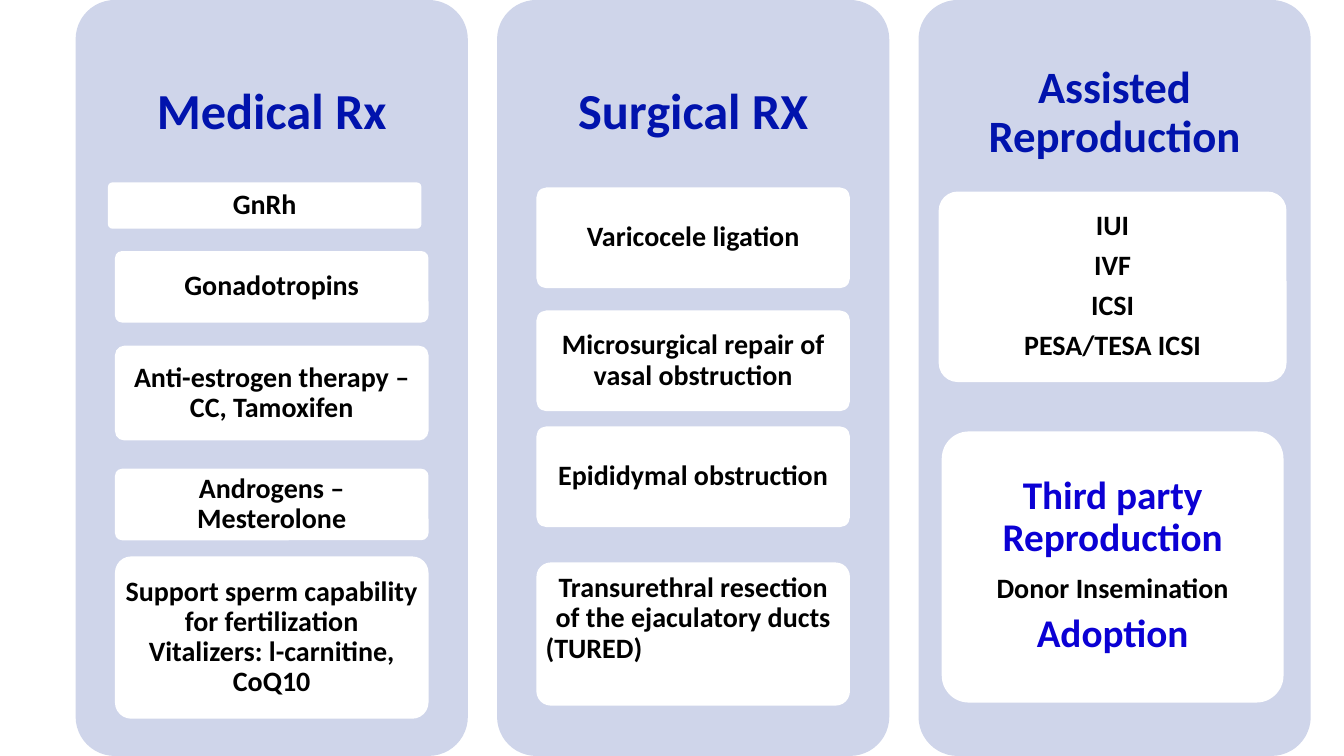
import pptx
import pptx.util
import pptx.dml.color
import pptx.enum.shapes
import pptx.enum.text

Inches = pptx.util.Inches
Pt = pptx.util.Pt
ALIGN = pptx.enum.text.PP_ALIGN

BLUE, BLACK, WHITE, PANEL = "0113AD", "000000", "FFFFFF", "CFD5EA"
ITEM = {"size": 20, "color": BLACK}
ACCENT = {"size": 28, "color": "0B00D4"}
LAST_LINE = {"size": 20, "color": BLACK, "align": ALIGN.LEFT}
TIGHT = {"size": 20, "color": BLACK, "after": 0}

# Each card: offset from its panel, top, width, height, bottom inset, paragraphs
COLUMNS = [
    ("Medical Rx", 36, 0.15, [
        (0.32, 1.81, 3.11, 0.46, 0.04, [("GnRh", ITEM)]),
        (0.39, 2.49, 3.11, 0.71, 0.04, [("Gonadotropins", ITEM)]),
        (0.39, 3.43, 3.11, 0.94, 0.04, [("Anti-estrogen therapy – CC, Tamoxifen", ITEM)]),
        (0.39, 4.65, 3.11, 0.71, 0.04, [("Androgens – Mesterolone", ITEM)]),
        (0.39, 5.52, 3.11, 1.61, 0.04, [
            ("Support sperm capability for fertilization\vVitalizers: l-carnitine, CoQ10", ITEM)]),
    ]),
    ("Surgical RX", 36, 0.15, [
        (0.39, 1.86, 3.11, 1, 0.04, [("Varicocele ligation", ITEM)]),
        (0.39, 3.08, 3.11, 1, 0.04, [("Microsurgical repair of vasal obstruction", ITEM)]),
        (0.39, 4.23, 3.11, 1, 0.04, [("Epididymal obstruction", ITEM)]),
        (0.39, 5.58, 3.11, 1.42, 0.34, [
            ("Transurethral resection of the ejaculatory ducts", TIGHT),
            ("(TURED)", LAST_LINE)]),
    ]),
    ("Assisted Reproduction", 32, 0.13, [
        (0.2, 1.9, 3.45, 1.89, 0.04, [
            ("IUI", ITEM), ("IVF", ITEM), ("ICSI", ITEM), ("PESA/TESA ICSI", ITEM)]),
        (0.23, 4.28, 3.39, 2.69, 0.06, [
            ("Third party Reproduction", ACCENT),
            ("Donor Insemination", ITEM),
            ("Adoption", ACCENT)]),
    ]),
]
PANEL_LEFT, PANEL_STEP, PANEL_W, PANEL_H, HEAD_H = 0.75, 4.18, 3.89, 7.5, 2.25


def rgb(value):
    return pptx.dml.color.RGBColor.from_string(value)


def set_all(obj, values):
    for name, value in values.items():
        setattr(obj, name, value)


def add_round(s, x, y, w, h, fill):
    sp = s.shapes.add_shape(pptx.enum.shapes.MSO_SHAPE.ROUNDED_RECTANGLE,
                            Inches(x), Inches(y), Inches(w), Inches(h))
    sp.adjustments[0] = 0.1
    sp.shadow.inherit = False
    sp.fill.solid()
    sp.fill.fore_color.rgb = rgb(fill)
    sp.line.fill.background()
    return sp


def write(tf, paragraphs, side, top, bottom):
    set_all(tf, {"word_wrap": True,
                 "vertical_anchor": pptx.enum.text.MSO_ANCHOR.MIDDLE,
                 "margin_left": Inches(side), "margin_right": Inches(side),
                 "margin_top": Inches(top), "margin_bottom": Inches(bottom)})
    for i, (text, style) in enumerate(paragraphs):
        p = tf.add_paragraph() if i else tf.paragraphs[0]
        p.text = text
        size = style["size"]
        set_all(p, {"alignment": style.get("align", ALIGN.CENTER),
                    "line_spacing": 0.9,
                    "space_before": Pt(0),
                    "space_after": Pt(style.get("after", 0.35 * size))})
        for r in p.runs:
            set_all(r.font, {"name": "Calibri", "size": Pt(size), "bold": True})
            r.font.color.rgb = rgb(style["color"])


def main():
    prs = pptx.Presentation()
    set_all(prs, {"slide_width": Inches(13.33), "slide_height": Inches(7.5)})
    s = prs.slides.add_slide(prs.slide_layouts[6])
    for i, (heading, size, inset, cards) in enumerate(COLUMNS):
        left = PANEL_LEFT + i * PANEL_STEP
        add_round(s, left, 0, PANEL_W, PANEL_H, PANEL)
        head = s.shapes.add_textbox(Inches(left), 0, Inches(PANEL_W), Inches(HEAD_H))
        write(head.text_frame, [(heading, {"size": size, "color": BLUE})],
              inset, inset, inset)
        for dx, y, w, h, bottom, paragraphs in cards:
            card = add_round(s, left + dx, y, w, h, WHITE)
            write(card.text_frame, paragraphs, 0.05, 0.04, bottom)
    prs.save("out.pptx")


if __name__ == "__main__":
    main()
